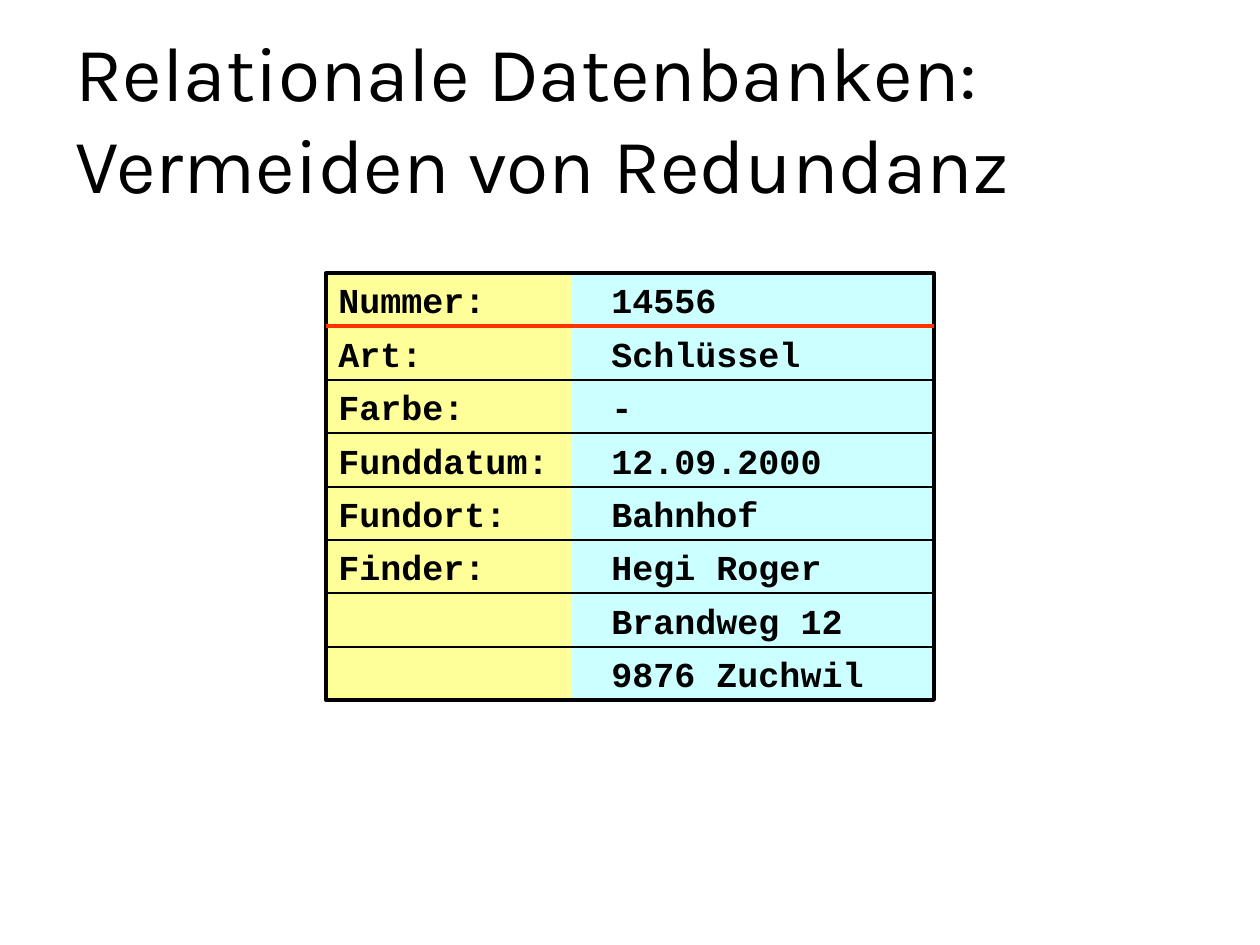
from lxml import etree
from pptx import Presentation
from pptx import util as u
from pptx.dml.color import RGBColor
from pptx.enum import shapes, text
from pptx.oxml import ns

PX = 914400 // 126  # EMU in one px
BLACK, YELLOW, CYAN, RED = "000000", "FFFF99", "CCFFFF", "FF3300"
RECORD = [
    ("Nummer:", "14556"),
    ("Art:", "Schlüssel"),
    ("Farbe:", "-"),
    ("Funddatum:", "12.09.2000"),
    ("Fundort:", "Bahnhof"),
    ("Finder:", "Hegi Roger"),
    ("", "Brandweg 12"),
    ("", "9876 Zuchwil"),
]
LABEL_WIDTH = 246
VALUE_TAB = 273


def px(*lengths):
    return [u.Emu(length * PX) for length in lengths]


def colour(value):
    return RGBColor.from_string(value)


def set_format(target, values):
    for name, value in values.items():
        setattr(target, name, value)


def write(shape, words, font, frame_format):
    """Put left-aligned black text in a shape and return its paragraph."""
    frame = shape.text_frame
    set_format(frame, {"word_wrap": True, "auto_size": text.MSO_AUTO_SIZE.NONE,
                       "vertical_anchor": text.MSO_ANCHOR.MIDDLE, **frame_format})
    para = frame.paragraphs[0]
    para.alignment = text.PP_ALIGN.LEFT
    span = para.add_run()
    span.text = words
    set_format(span.font, font)
    span.font.color.rgb = colour(BLACK)
    return para


def add_rect(group, box, fill=None, line=None):
    """Add a rectangle; line is the outline width in points."""
    rect = group.shapes.add_shape(shapes.MSO_SHAPE.RECTANGLE, *px(*box))
    rect.shadow.inherit = False
    if fill:
        rect.fill.solid()
        rect.fill.fore_color.rgb = colour(fill)
    else:
        rect.fill.background()
    if line:
        rect.line.color.rgb = colour(BLACK)
        rect.line.width = u.Pt(line)
    else:
        rect.line.fill.background()
    return rect


def add_rule(group, left, right, y):
    rule = group.shapes.add_connector(
        shapes.MSO_CONNECTOR.STRAIGHT, *px(left, y, right, y))
    rule.line.color.rgb = colour(RED)
    rule.line.width = u.Pt(2.25)
    etree.SubElement(rule.element.spPr, ns.qn("a:effectLst"))


def add_row(group, box, label, value):
    """Add one field of the record, its value set at a tab stop."""
    row = add_rect(group, box, line=0.75)
    para = write(row, f"{label}\t{value}",
                 {"name": "Courier New", "size": u.Pt(20), "bold": True},
                 {"margin_top": 0, "margin_bottom": 0})
    tabs = etree.SubElement(para._p.get_or_add_pPr(), ns.qn("a:tabLst"))
    etree.SubElement(tabs, ns.qn("a:tab"), pos=str(VALUE_TAB * PX), algn="l")


def add_title(page, box):
    title = page.shapes.title
    title.left, title.top, title.width, title.height = px(*box)
    write(title, "Relationale Datenbanken: Vermeiden von Redundanz",
          {"name": "Karla", "size": u.Pt(44)}, {})


def add_record(page, box):
    left, top, width, height = box
    group = page.shapes.add_group_shape()

    # Coloured columns and outer frame
    add_rect(group, (left, top, LABEL_WIDTH, height), fill=YELLOW)
    add_rect(group, (left + LABEL_WIDTH, top, width - LABEL_WIDTH, height), fill=CYAN)
    add_rect(group, box, line=2.25)

    # Fields at equal heights
    edges = [top + round(height * i / len(RECORD)) for i in range(len(RECORD) + 1)]
    for (label, value), start, end in zip(RECORD, edges, edges[1:]):
        add_row(group, (left, start, width, end - start), label, value)

    # Red rule under the key field
    add_rule(group, left, left + width, edges[1])


def main():
    deck = Presentation()
    deck.slide_width, deck.slide_height = px(1260, 945)
    page = deck.slides.add_slide(deck.slide_layouts[5])
    add_title(page, (63, 38, 1134, 157))
    add_record(page, (326, 273, 608, 427))
    deck.save("out.pptx")


if __name__ == "__main__":
    main()
